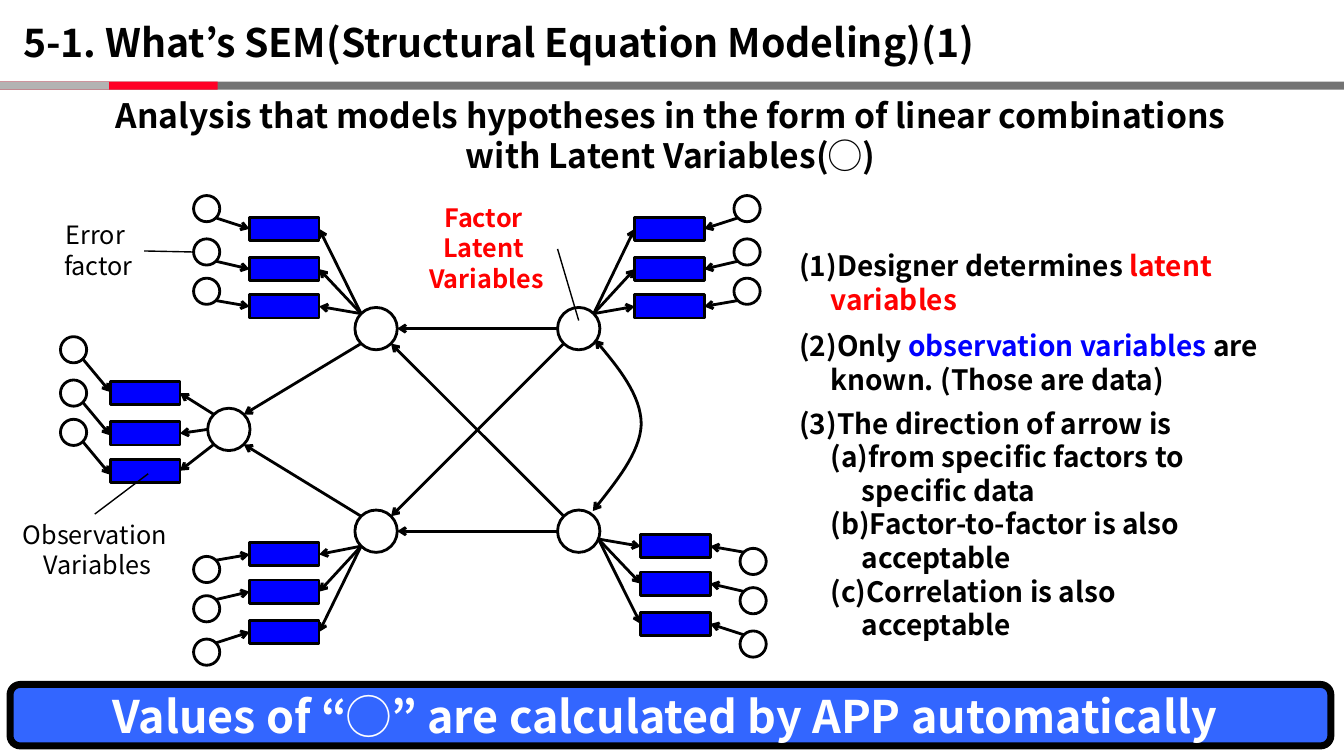
import math
import pptx
import pptx.dml.color
import pptx.enum.shapes
import pptx.enum.text
import pptx.oxml
import pptx.oxml.ns
import pptx.util

FONT = "Noto Sans CJK JP"
BLACK, WHITE, RED, BLUE = "000000", "FFFFFF", "FF0000", "0000FF"
WIDTH, HEIGHT = 13.33, 7.5

STRIPES = [(1, "737373"), (0.162, "FF0026"), (0.081, "B3B3B3")]
TITLE = "5-1. What’s SEM(Structural Equation Modeling)(1)"
SUMMARY = [
    "Analysis that models hypotheses in the form of linear combinations",
    "with Latent Variables(◯)",
]
BANNER = "Values of “◯” are calculated by APP automatically "

LABELS = [
    ((4.11, 1.96, 1.43, 1.01), ["Factor ", "Latent ", "Variables"], RED, True),
    ((0.1, 5.1, 1.68, 0.71), ["Observation", " Variables"], BLACK, False),
    ((0.52, 2.13, 0.91, 0.71), ["Error ", "factor"], BLACK, False),
]
POINTERS = [((5.53, 2.47), (5.74, 3.18)), ((1.47, 4.7), (0.94, 5.1)), ((1.43, 2.49), (1.92, 2.5))]

NOTES = [
    (2.42, 0.77, [
        (0, [("(1)Designer determines ", BLACK), ("latent", RED)]),
        (1, [("variables", RED)]),
    ]),
    (3.21, 0.77, [
        (0, [("(2)Only ", BLACK), ("observation variables ", BLUE), ("are", BLACK)]),
        (1, [("known. (Those are data)", BLACK)]),
    ]),
    (3.98, 2.46, [
        (0, [("(3)The direction of arrow is", BLACK)]),
        (1, [("(a)from specific factors to", BLACK)]),
        (2, [("specific data", BLACK)]),
        (1, [("(b)Factor-to-factor is also", BLACK)]),
        (2, [("acceptable", BLACK)]),
        (1, [("(c)Correlation is also", BLACK)]),
        (2, [("acceptable", BLACK)]),
    ]),
]
INDENT = 0.31

COLUMNS = (2.27, 3.73, 5.74)
ROWS = (3.26, 4.26, 5.27)
FACTORS = {
    "left": (0, 1),
    "top left": (1, 0),
    "top right": (2, 0),
    "bottom left": (1, 2),
    "bottom right": (2, 2),
}
FACTOR_SIZE, ERROR_SIZE = 0.42, 0.26
BOX_WIDTH, BOX_HEIGHT = 0.69, 0.23

PATHS = [
    ("bottom right", (-1, -1), "top left", (1, 1)),
    ("bottom right", (-1, 0), "bottom left", (1, 0)),
    ("top right", (-1, 1), "bottom left", (1, -1)),
    ("top right", (-1, 0), "top left", (1, 0)),
    ("top left", (-1, 1), "left", (1, -1)),
    ("bottom left", (-1, -1), "left", (1, 1)),
]
CORRELATION = [
    ((5.9, 3.37), (6.13, 3.64), (6.36, 3.92), (6.36, 4.21)),
    ((6.36, 4.21), (6.35, 4.49), (6.11, 4.78), (5.88, 5.07)),
]

BOX_STEPS = (0, 0.4, 0.77)
ERROR_STEPS = (-0.2, 0.23, 0.62)
CLUSTERS = [
    ("left", 1.44, 3.9, -1, 1, 0.71, -0.23, [(-1, -1), (-1, 0), (-1, 1)]),
    ("top left", 2.82, 2.27, -1, 1, 0.77, 0, [(-1, -1)] * 3),
    ("top right", 6.64, 2.27, 1, 1, 0.77, 0, [(1, -1)] * 3),
    ("bottom right", 6.7, 6.19, 1, -1, 0.77, 0, [(1, 0.4)] * 3),
    ("bottom left", 2.82, 6.27, -1, -1, 0.77, 0, [(-1, 1)] * 3),
]
PARALLEL_DROP = 0.42

presentation = pptx.Presentation()
presentation.slide_width = pptx.util.Inches(WIDTH)
presentation.slide_height = pptx.util.Inches(HEIGHT)
slide = presentation.slides.add_slide(presentation.slide_layouts[6])
KINDS = pptx.enum.shapes.MSO_SHAPE


def color(value):
    return pptx.dml.color.RGBColor.from_string(value)


def inches(values):
    return [pptx.util.Inches(value) for value in values]


def add_element(parent, tag, **attributes):
    element = pptx.oxml.parse_xml(f"<{tag} {pptx.oxml.ns.nsdecls('a')}/>")
    for name, value in attributes.items():
        element.set(name, value)
    parent.append(element)


def draw_line(shape, width, ends=()):
    shape.line.color.rgb = color(BLACK)
    shape.line.width = pptx.util.Pt(width)
    outline = shape.element.spPr.find(pptx.oxml.ns.qn("a:ln"))
    for end in ends:
        add_element(outline, f"a:{end}", type="arrow")


def add_shape(kind, place, fill=None, width=0):
    shape = slide.shapes.add_shape(kind, *inches(place))
    shape.shadow.inherit = False
    if fill:
        shape.fill.solid()
        shape.fill.fore_color.rgb = color(fill)
    else:
        shape.fill.background()
    if width:
        draw_line(shape, width)
    else:
        shape.line.fill.background()
    return shape


def add_centered(kind, center, width, height, fill=None):
    place = (center[0] - width / 2, center[1] - height / 2, width, height)
    return add_shape(kind, place, fill, 2)


def add_line(start, end, width=2, ends=("tailEnd",)):
    line = slide.shapes.add_connector(
        pptx.enum.shapes.MSO_CONNECTOR.STRAIGHT, *inches(start + end))
    draw_line(line, width, ends)
    add_element(line.element.spPr, "a:effectLst")
    return line


def write(shape, lines, size, bold=True, centered=False, wrap=True):
    frame = shape.text_frame
    frame.word_wrap = wrap
    for index, (level, runs) in enumerate(lines):
        paragraph = frame.paragraphs[0] if index == 0 else frame.add_paragraph()
        align = pptx.enum.text.PP_ALIGN
        paragraph.alignment = align.CENTER if centered else align.LEFT
        if level:
            properties = paragraph._p.get_or_add_pPr()
            properties.set("marL", str(pptx.util.Inches(level * INDENT)))
            properties.set("indent", "0")
        for text, tint in runs:
            run = paragraph.add_run()
            run.text = text
            run.font.size = pptx.util.Pt(size)
            run.font.bold = bold
            run.font.name = FONT
            run.font.color.rgb = color(tint)
            add_element(run._r.get_or_add_rPr(), "a:ea", typeface=FONT)


def add_text(place, lines, size, **options):
    write(slide.shapes.add_textbox(*inches(place)), lines, size, **options)


def plain(texts, tint=BLACK):
    return [(0, [(text, tint)]) for text in texts]


def factor_center(name):
    column, row = FACTORS[name]
    return COLUMNS[column], ROWS[row]


def rim(center, size, direction):
    reach = size / 2 / math.hypot(*direction)
    return tuple(middle + reach * part for middle, part in zip(center, direction))


def bezier(points, t):
    weights = ((1 - t) ** 3, 3 * t * (1 - t) ** 2, 3 * t * t * (1 - t), t ** 3)
    return tuple(sum(w * point[axis] for w, point in zip(weights, points)) for axis in (0, 1))


def add_correlation(steps=16):
    points = [inches(bezier(curve, step / steps))
              for curve in CORRELATION for step in range(steps + 1)]
    builder = slide.shapes.build_freeform(*points[0], scale=1.0)
    builder.add_line_segments(points[1:], close=False)
    shape = builder.convert_to_shape()
    shape.shadow.inherit = False
    shape.fill.background()
    draw_line(shape, 2, ("headEnd", "tailEnd"))


def add_cluster(name, x, y, side, turn, distance, shift, sites):
    inner, outer = (3, 1) if side < 0 else (1, 3)
    for box_step, error_step, site in zip(BOX_STEPS, ERROR_STEPS, sites):
        box_center = (x, y + turn * box_step)
        box = add_centered(KINDS.RECTANGLE, box_center, BOX_WIDTH, BOX_HEIGHT, BLUE)
        near = (x - side * BOX_WIDTH / 2, box_center[1])
        add_line(rim(factor_center(name), FACTOR_SIZE, site), near).end_connect(box, inner)
        error = (x + side * distance, y + turn * (error_step + shift))
        add_centered(KINDS.OVAL, error, ERROR_SIZE, ERROR_SIZE)
        start = rim(error, ERROR_SIZE, (-side, turn))
        far = x + side * BOX_WIDTH / 2
        if shift:
            add_line(start, (far, error[1] + PARALLEL_DROP))
        else:
            add_line(start, (far, box_center[1])).end_connect(box, outer)


for share, fill in STRIPES:
    add_shape(KINDS.RECTANGLE, (0, 0.81, share * WIDTH, 0.08), fill)
add_text((0.13, 0.13, 10.69, 0.57), plain([TITLE]), 28, wrap=False)
banner = add_shape(KINDS.ROUNDED_RECTANGLE, (0.1, 6.79, 13.1, 0.61), "3366FF", 5)
banner.text_frame.vertical_anchor = pptx.enum.text.MSO_ANCHOR.MIDDLE
write(banner, plain([BANNER], WHITE), 32, centered=True)
add_text((0.1, 0.89, 13.1, 0.91), plain(SUMMARY), 24, centered=True)

for name in FACTORS:
    add_centered(KINDS.OVAL, factor_center(name), FACTOR_SIZE, FACTOR_SIZE)
for source, leave, target, arrive in PATHS:
    add_line(rim(factor_center(source), FACTOR_SIZE, leave),
             rim(factor_center(target), FACTOR_SIZE, arrive))
add_correlation()
for cluster in CLUSTERS:
    add_cluster(*cluster)

for place, texts, tint, bold in LABELS:
    add_text(place, plain(texts, tint), 18, bold=bold, centered=True, wrap=False)
for start, end in POINTERS:
    add_line(start, end, 1, ())
for top, height, lines in NOTES:
    add_text((7.83, top, 5.37, height), lines, 20)

presentation.save("out.pptx")
